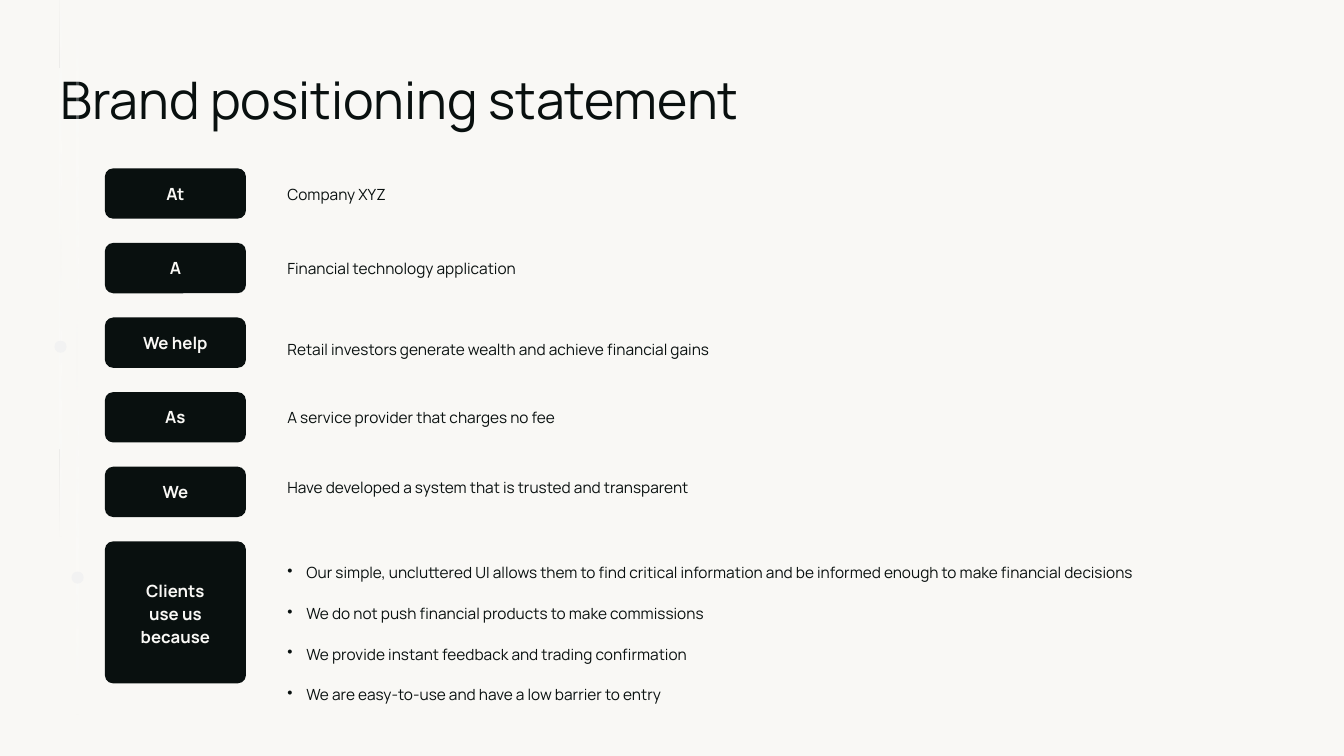
from lxml import etree
from pptx import Presentation
from pptx.dml.color import RGBColor
from pptx.enum.shapes import MSO_SHAPE
from pptx.enum.text import MSO_ANCHOR, MSO_AUTO_SIZE, PP_ALIGN
from pptx.oxml import parse_xml
from pptx.oxml.ns import nsdecls, qn
from pptx.util import Pt

PX = 9144  # 100 px to the inch
INK = RGBColor(0x09, 0x10, 0x0F)
CREAM = RGBColor(0xF9, 0xF8, 0xF5)
PALE_GREY = RGBColor(0xF2, 0xF2, 0xF2)
FONT = "Manrope"
RECT, OVAL, ROUNDED = MSO_SHAPE.RECTANGLE, MSO_SHAPE.OVAL, MSO_SHAPE.ROUNDED_RECTANGLE
TOP, MIDDLE = MSO_ANCHOR.TOP, MSO_ANCHOR.MIDDLE
LEFT, CENTER = PP_ALIGN.LEFT, PP_ALIGN.CENTER
FIXED, GROW = MSO_AUTO_SIZE.NONE, MSO_AUTO_SIZE.SHAPE_TO_FIT_TEXT

LABEL_LEFT, LABEL_WIDTH, LABEL_HEIGHT = 104, 140, 50
FIRST_ROW, ROW_PITCH = 167, 74
ANSWER_LEFT, ANSWER_WIDTH, ANSWER_HEIGHT = 285, 954, 19
REASONS_HEIGHT = 141
CORNER = 8.35
BULLET_INDENT = 19


def write(shape, text, size=11, color=INK, bold=False, align=LEFT, anchor=MIDDLE,
          margins=(0, 0), fit=FIXED, spacing=None, after=None, bullet=False):
    """Fill a shape with text, one paragraph to a line; margins are (side, top and bottom)."""
    frame = shape.text_frame
    frame.text = text
    frame.word_wrap = True
    frame.auto_size = fit
    frame.vertical_anchor = anchor
    frame.margin_left = frame.margin_right = margins[0] * PX
    frame.margin_top = frame.margin_bottom = margins[1] * PX
    for paragraph in frame.paragraphs:
        paragraph.alignment = align
        if spacing:
            paragraph.line_spacing = spacing
        if after:
            paragraph.space_after = Pt(after)
        font = paragraph.runs[0].font
        font.name, font.size, font.bold = FONT, Pt(size), bold
        font.color.rgb = color
        if bullet:
            properties = paragraph._p.get_or_add_pPr()
            properties.set("marL", str(BULLET_INDENT * PX))
            properties.set("indent", str(-BULLET_INDENT * PX))
            bullet_color = etree.SubElement(properties, qn("a:buClr"))
            etree.SubElement(bullet_color, qn("a:srgbClr")).set("val", str(color))
            etree.SubElement(properties, qn("a:buChar")).set("char", "•")


def add_plain(kind, left, top, width, height, color=None):
    """Add a preset shape without outline or shadow."""
    shape = slide.shapes.add_shape(kind, left * PX, top * PX, width * PX, height * PX)
    shape.shadow.inherit = False
    shape.line.fill.background()
    if color is not None:
        shape.fill.solid()
        shape.fill.fore_color.rgb = color
    return shape


deck = Presentation()
deck.slide_width, deck.slide_height = 1333 * PX, 750 * PX
slide = deck.slides.add_slide(deck.slide_layouts[5])
slide.background.fill.solid()
slide.background.fill.fore_color.rgb = CREAM

title = slide.shapes.title
title.left, title.top, title.width, title.height = 60 * PX, 67 * PX, 1230 * PX, 68 * PX
write(title, "Brand positioning statement", size=37, anchor=TOP, after=13)

# Faint vertical lines that fade out at both ends, each with a dot
for left, top, height in [(76, 0, 709), (59, -19, 551)]:
    fading_line = add_plain(RECT, left, top, 2, height)
    fade = parse_xml(
        f'<a:gradFill {nsdecls("a")} rotWithShape="1"><a:gsLst>'
        '<a:gs pos="0"><a:srgbClr val="FFFFFF"><a:alpha val="0"/></a:srgbClr></a:gs>'
        f'<a:gs pos="50000"><a:srgbClr val="{CREAM}"/></a:gs>'
        '<a:gs pos="100000"><a:srgbClr val="FFFFFF"><a:alpha val="0"/></a:srgbClr></a:gs>'
        '</a:gsLst><a:lin ang="5400000" scaled="0"/></a:gradFill>')
    fading_line._element.spPr.find(qn("a:prstGeom")).addnext(fade)
for left, top in [(71, 567), (54, 338)]:
    add_plain(OVAL, left, top, 12, 12, PALE_GREY)

REASONS = "\n".join([
    "Our simple, uncluttered UI allows them to find critical information"
    " and be informed enough to make financial decisions",
    "We do not push financial products to make commissions",
    "We provide instant feedback and trading confirmation",
    "We are easy-to-use and have a low barrier to entry",
])
# Label, answer, answer's offset from the row top, answer's line spacing
STATEMENT = [
    ("At", "Company XYZ", 16, None),
    ("A", "Financial technology application", 16, None),
    ("We help", "Retail investors generate wealth and achieve financial gains", 14, 1.84),
    ("As", "A service provider that charges no fee", 16, None),
    ("We", "Have developed a system that is trusted and transparent", 11, None),
    ("Clients\nuse us\nbecause", REASONS, 0, 2.2),
]
for row, (label, answer, offset, spacing) in enumerate(STATEMENT):
    top = FIRST_ROW + row * ROW_PITCH
    is_reasons = answer == REASONS
    label_height = REASONS_HEIGHT if is_reasons else LABEL_HEIGHT
    answer_height = REASONS_HEIGHT if is_reasons else ANSWER_HEIGHT

    label_box = add_plain(ROUNDED, LABEL_LEFT, top, LABEL_WIDTH, label_height, INK)
    label_box.adjustments[0] = CORNER / min(LABEL_WIDTH, label_height)
    write(label_box, label, size=12, color=CREAM, bold=True, align=CENTER,
          margins=(7, 3), spacing=1.15 if is_reasons else None)

    answer_box = slide.shapes.add_textbox(
        ANSWER_LEFT * PX, (top + offset) * PX, ANSWER_WIDTH * PX, answer_height * PX)
    write(answer_box, answer, anchor=TOP if is_reasons else MIDDLE, fit=GROW,
          spacing=spacing, bullet=is_reasons)

deck.save("out.pptx")
